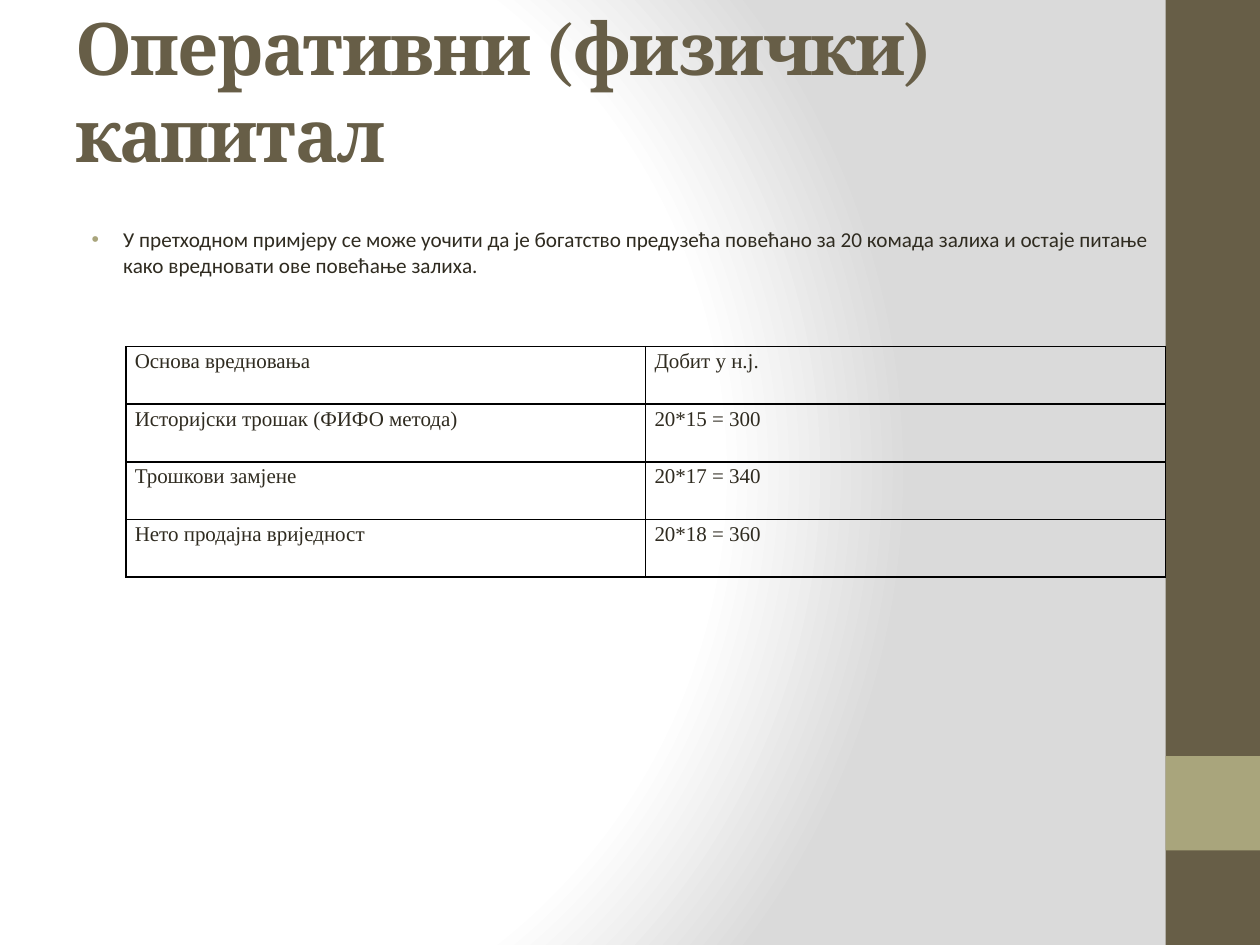
import lxml.etree
import pptx
import pptx.dml.color
import pptx.enum.shapes
import pptx.enum.text
import pptx.oxml
import pptx.oxml.ns
import pptx.util

qn = pptx.oxml.ns.qn
Pt = pptx.util.Pt
Inches = pptx.util.Inches
align = pptx.enum.text.PP_ALIGN
hues = {"brown": "675E47", "olive": "A9A57C", "ink": "2F2B20",
        "white": "FFFFFF", "gray": "DADADA", "line": "000000"}

# Grid of 40 columns by 30 rows
deck = pptx.Presentation()
deck.slide_width, deck.slide_height = Inches(10), Inches(7.5)
col, row = deck.slide_width / 40, deck.slide_height / 30


def place(x, y, wide, high):
    return [round(n) for n in (x * col, y * row, wide * col, high * row)]


def write(para, text, hue, **form):
    run = para.add_run()
    run.text = text
    run.font.color.rgb = pptx.dml.color.RGBColor.from_string(hues[hue])
    for key, val in form.items():
        setattr(run.font, key, val)
    return run


slide = deck.slides.add_slide(deck.slide_layouts[5])

# Background: round gradient
slide.background.fill.solid()
plain = slide.element.find(".//" + qn("a:solidFill"))
stops = [(0, "white"), (75, "white"), (100, "gray")]
marks = "".join(f'<a:gs pos="{pos * 1000}"><a:srgbClr val="{hues[hue]}"/></a:gs>'
                for pos, hue in stops)
glow = pptx.oxml.parse_xml(
    f'<a:gradFill {pptx.oxml.ns.nsdecls("a")} rotWithShape="1"><a:gsLst>{marks}</a:gsLst>'
    '<a:path path="circle"><a:fillToRect l="20000" t="50000" r="100000" b="50000"/>'
    '</a:path></a:gradFill>')
plain.getparent().replace(plain, glow)

# Side bars
for hue, top, high in [("brown", 0, 30), ("olive", 24, 3)]:
    bar = slide.shapes.add_shape(pptx.enum.shapes.MSO_SHAPE.RECTANGLE,
                                 *place(37, top, 3, high))
    bar.shadow.inherit = False
    bar.fill.solid()
    bar.fill.fore_color.rgb = pptx.dml.color.RGBColor.from_string(hues[hue])
    bar.line.fill.background()

# Title, lifted by a deep bottom margin
title = slide.shapes.title
slide.shapes.element.append(title.element)
title.left, title.top, title.width, title.height = place(2, 2.33, 36, 3.87)
frame = title.text_frame
form = {"word_wrap": True, "auto_size": pptx.enum.text.MSO_AUTO_SIZE.NONE,
        "vertical_anchor": pptx.enum.text.MSO_ANCHOR.MIDDLE,
        "margin_bottom": Inches(0.75)}
for key, val in form.items():
    setattr(frame, key, val)
para = frame.paragraphs[0]
para.alignment = align.LEFT
run = write(para, "Оперативни (физички) капитал", "brown",
            name="Cambria", size=Pt(41.4), bold=True)
run.font._element.set("spc", "-100")

# Bullet text
body = slide.shapes.add_textbox(*place(2, 7, 36, 3.33))
body.text_frame.word_wrap = True
para = body.text_frame.paragraphs[0]
props = para._p.get_or_add_pPr()
props.set("marL", str(Inches(0.38)))
props.set("indent", str(Inches(-0.25)))
tint = lxml.etree.SubElement(props, qn("a:buClr"))
lxml.etree.SubElement(tint, qn("a:srgbClr"), val=hues["olive"])
lxml.etree.SubElement(props, qn("a:buFont"), typeface="Arial")
lxml.etree.SubElement(props, qn("a:buChar"), char="•")
write(para, "У претходном примјеру се може уочити да је богатство предузећа повећано "
      "за 20 комада залиха и остаје питање како вредновати ове повећање залиха.",
      "ink", name="Calibri", size=Pt(12.1))

# Table of valuation bases
data = [("Основа вредновања", "Добит у н.ј."),
        ("Историјски трошак (ФИФО метода)", "20*15 = 300"),
        ("Трошкови замјене", "20*17 = 340"),
        ("Нето продајна вриједност", "20*18 = 360")]
table = slide.shapes.add_table(len(data), 2, *place(4, 11, 33, 7.32)).table
table.first_row = table.horz_banding = False
inset = {"margin_left": Inches(0.07), "margin_right": Inches(0.07),
         "margin_top": 0, "margin_bottom": 0}
space = {"alignment": align.JUSTIFY, "line_spacing": 1.15, "space_after": Pt(6)}
for r, texts in enumerate(data):
    for c, text in enumerate(texts):
        cell = table.cell(r, c)
        for key, val in inset.items():
            setattr(cell, key, val)
        props = cell._tc.get_or_add_tcPr()
        for side in "LRTB":
            edge = lxml.etree.SubElement(props, qn("a:ln" + side), w=str(Pt(1)))
            fill = lxml.etree.SubElement(edge, qn("a:solidFill"))
            lxml.etree.SubElement(fill, qn("a:srgbClr"), val=hues["line"])
        cell.fill.background()
        para = cell.text_frame.paragraphs[0]
        for key, val in space.items():
            setattr(para, key, val)
        write(para, text, "ink", name="Times New Roman", size=Pt(12))

deck.save("out.pptx")
